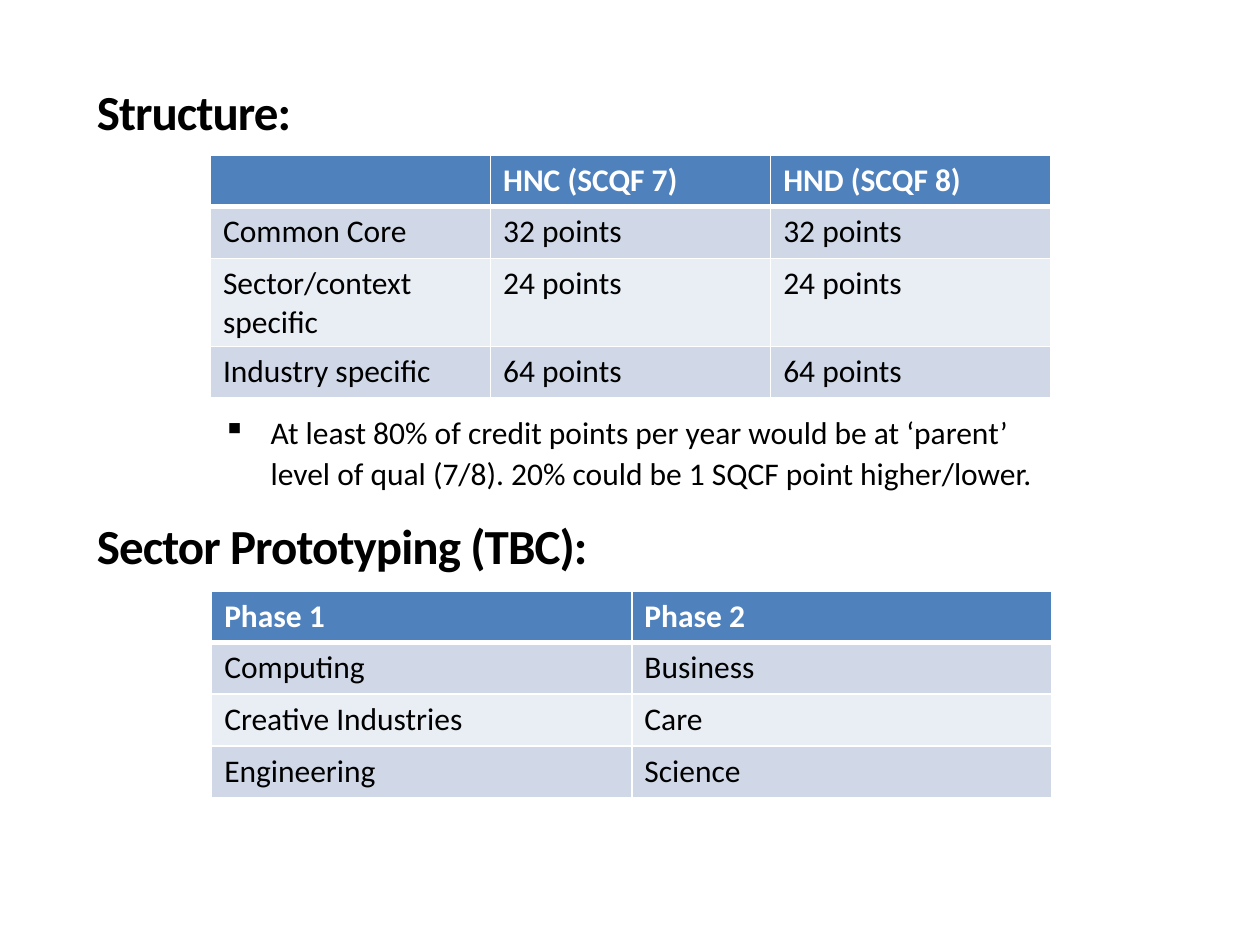
from pptx import Presentation
from pptx import util as u
from pptx.dml.color import RGBColor
from pptx.enum import text
from pptx.oxml import parse_xml
from pptx.oxml.ns import nsdecls

COLORS = {"black": "000000", "white": "FFFFFF", "header": "4F81BD",
          "band_dark": "D0D8E8", "band_light": "E9EDF4"}
FONT = "Calibri"
STRUCTURE = [["", "HNC (SCQF 7)", "HND (SCQF 8)"],
             ["Common Core", "32 points", "32 points"],
             ["Sector/context specific", "24 points", "24 points"],
             ["Industry specific", "64 points", "64 points"]]
PHASES = [["Phase 1", "Phase 2"], ["Computing", "Business"],
          ["Creative Industries", "Care"], ["Engineering", "Science"]]
NOTE = ("At least 80% of credit points per year would be at ‘parent’ level of qual (7/8). "
        "20% could be 1 SQCF point higher/lower.")


def write(tf, words, size=18, color="black", bold=False, spacing=None):
    """Write words into the first paragraph of a text frame and return it."""
    p = tf.paragraphs[0]
    r = p.add_run()
    r.text = words
    f = r.font
    f.name, f.size, f.bold = FONT, u.Pt(size), bold
    f.color.rgb = RGBColor.from_string(COLORS[color])
    if spacing is not None:
        r._r.get_or_add_rPr().set("spc", str(int(spacing * 100)))
    return p


def add_box(s, left, top, width, height, wrap):
    """Add a text box that fits its text and return its text frame."""
    tf = s.shapes.add_textbox(*map(u.Inches, (left, top, width, height))).text_frame
    tf.word_wrap = wrap
    tf.auto_size = text.MSO_AUTO_SIZE.SHAPE_TO_FIT_TEXT
    return tf


def add_heading(s, words, top, width):
    """Add a bold section heading."""
    tf = add_box(s, 0.67, top, width, 0.57, False)
    write(tf, words, size=28, bold=True, spacing=-0.5)


def add_bullet(s, words, left, top, width, height):
    """Add a paragraph with a square bullet and a hanging indent."""
    tf = add_box(s, left, top, width, height, True)
    p = tf.paragraphs[0]
    pPr = p._p.get_or_add_pPr()
    pPr.set("marL", str(u.Inches(0.38)))
    pPr.set("indent", str(u.Inches(-0.38)))
    pPr.append(parse_xml(f'<a:buChar {nsdecls("a")} char="▪"/>'))
    p.line_spacing, p.space_after = 1.07, u.Pt(8)
    write(tf, words)


def set_borders(cell, widths):
    """Draw white borders with a width in points for each side."""
    tcPr = cell._tc.get_or_add_tcPr()
    for side, width in widths.items():
        tcPr.append(parse_xml(
            f'<a:ln{side} {nsdecls("a")} w="{u.Pt(width)}"><a:solidFill>'
            f'<a:srgbClr val="{COLORS["white"]}"/></a:solidFill></a:ln{side}>'))


def add_banded_table(s, rows, left, top, width, row_height=0.41):
    """Add a table with a blue header and alternating bands."""
    n_rows, n_cols = len(rows), len(rows[0])
    table = s.shapes.add_table(n_rows, n_cols, u.Inches(left), u.Inches(top),
                               u.Inches(width), u.Inches(row_height * n_rows)).table
    for i, row in enumerate(rows):
        header = i == 0
        fill = "header" if header else ("band_light", "band_dark")[i % 2]
        for j, words in enumerate(row):
            cell = table.cell(i, j)
            set_borders(cell, {"L": 1, "R": 1, "T": 3 if i == 1 else 1,
                               "B": 3 if header else 1})
            cell.fill.solid()
            cell.fill.fore_color.rgb = RGBColor.from_string(COLORS[fill])
            if words:
                write(cell.text_frame, words, bold=header,
                      color="white" if header else "black")


def main():
    """Build the slide and save it."""
    prs = Presentation()
    prs.slide_width, prs.slide_height = u.Inches(10), u.Inches(7.5)
    s = prs.slides.add_slide(prs.slide_layouts[6])
    add_heading(s, "Structure:", 0.6, 1.76)
    add_banded_table(s, STRUCTURE, 1.67, 1.23, 6.67)
    add_heading(s, "Sector Prototyping (TBC):", 4.04, 4.15)
    add_banded_table(s, PHASES, 1.68, 4.69, 6.67)
    add_bullet(s, NOTE, 1.67, 3.21, 6.67, 0.75)
    prs.save("out.pptx")


if __name__ == "__main__":
    main()
